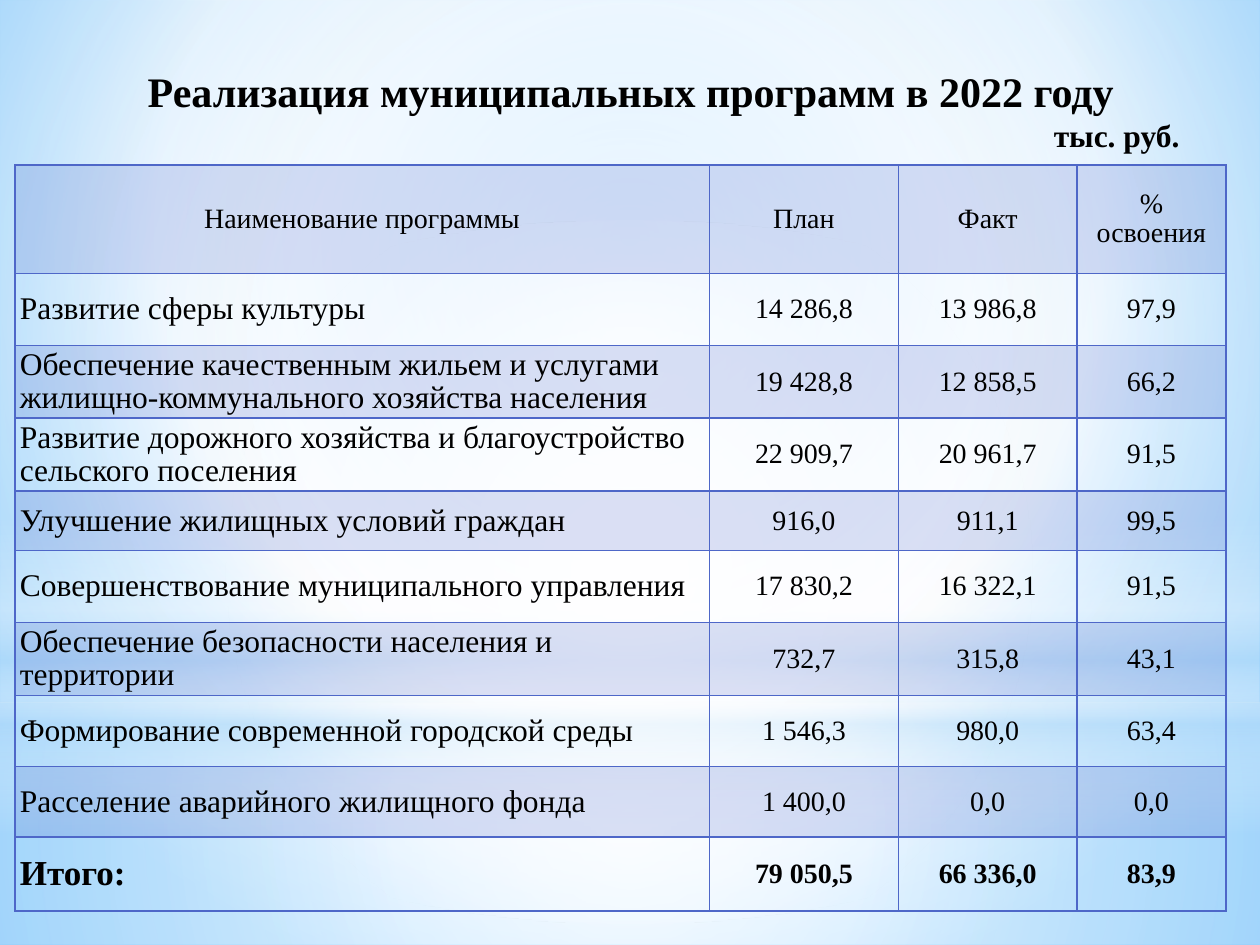
from lxml import etree
from pptx import Presentation
from pptx.dml.color import RGBColor
from pptx.enum.shapes import MSO_SHAPE
from pptx.enum.text import MSO_ANCHOR, PP_ALIGN
from pptx.oxml.ns import qn
from pptx.util import Cm, Pt

RECT, OVAL = MSO_SHAPE.RECTANGLE, MSO_SHAPE.OVAL
MIDDLE = MSO_ANCHOR.MIDDLE
LEFT, CENTER, RIGHT = PP_ALIGN.LEFT, PP_ALIGN.CENTER, PP_ALIGN.RIGHT

BLACK = RGBColor(0, 0, 0)
WHITE = RGBColor(0xFF, 0xFF, 0xFF)
INDIGO = RGBColor(0x4E, 0x67, 0xC8)
PALE_BLUE = RGBColor(0xB4, 0xDC, 0xFA)
LIGHT_SKY = RGBColor(0x9E, 0xD5, 0xFF)
SKY = RGBColor(0x5B, 0xB9, 0xFF)

HEADINGS = ["Наименование программы", "План", "Факт", "% освоения"]
PROGRAMS = [
    ["Развитие сферы культуры", "14 286,8", "13 986,8", "97,9"],
    ["Обеспечение качественным жильем и услугами жилищно-коммунального "
     "хозяйства населения", "19 428,8", "12 858,5", "66,2"],
    ["Развитие дорожного хозяйства и благоустройство сельского поселения",
     "22 909,7", "20 961,7", "91,5"],
    ["Улучшение жилищных условий граждан", "916,0", "911,1", "99,5"],
    ["Совершенствование муниципального управления", "17 830,2", "16 322,1", "91,5"],
    ["Обеспечение безопасности населения и территории", "732,7", "315,8", "43,1"],
    ["Формирование современной городской среды", "1 546,3", "980,0", "63,4"],
    ["Расселение аварийного жилищного фонда", "1 400,0", "0,0", "0,0"],
]
TOTAL = ["Итого:", "79 050,5", "66 336,0", "83,9"]
COLUMN_WIDTHS = [14, 3.81, 3.6, 3]
ROW_HEIGHTS = [2.18, 1.45, 1.45, 1.45, 1.2, 1.45, 1.45, 1.43, 1.43, 1.49]


def add_color(parent, color, opacity=100):
    clr = etree.SubElement(parent, qn("a:srgbClr"), val=str(color))
    if opacity < 100:
        etree.SubElement(clr, qn("a:alpha"), val=str(opacity * 1000))


def set_gradient(owner, stops, center=None):
    """Turn the solid fill in owner into a radial gradient, or a vertical one without center."""
    solid = owner.xpath(".//a:solidFill")[0]
    gradient = etree.Element(qn("a:gradFill"), rotWithShape="1")
    stop_list = etree.SubElement(gradient, qn("a:gsLst"))
    for position, color, opacity in stops:
        stop = etree.SubElement(stop_list, qn("a:gs"), pos=str(position * 1000))
        add_color(stop, color, opacity)
    if center:
        circle = etree.SubElement(gradient, qn("a:path"), {"path": "circle"})
        edges = {side: str(share * 1000) for side, share in zip("ltrb", center)}
        etree.SubElement(circle, qn("a:fillToRect"), edges)
    else:
        etree.SubElement(gradient, qn("a:lin"), ang="5400000", scaled="0")
    solid.getparent().replace(solid, gradient)


class SlideBuilder:
    font = "Times New Roman"
    line_spacing = 0.95

    def __init__(self, slide):
        self.slide = slide

    def background(self, stops, center):
        self.slide.background.fill.solid()
        set_gradient(self.slide.element, stops, center)

    def glow(self, kind, top, height, stops, center=None):
        """Add a full-width translucent gradient shape."""
        shape = self.slide.shapes.add_shape(kind, 0, Cm(top), Cm(25.4), Cm(height))
        shape.shadow.inherit = False
        shape.line.fill.background()
        shape.fill.solid()
        set_gradient(shape.element.spPr, stops, center)

    def add_text(self, paragraph, text, size, align, bold=False):
        paragraph.alignment = align
        run = paragraph.add_run()
        run.text = text
        run.font.name = self.font
        run.font.size = Pt(size)
        run.font.bold = bold
        run.font.color.rgb = BLACK

    def title(self, heading, unit):
        box = self.slide.shapes.add_textbox(Cm(1.4), Cm(1.2), Cm(22.63), Cm(1.2))
        frame = box.text_frame
        frame.word_wrap = True
        self.add_text(frame.paragraphs[0], heading, 24, CENTER, True)
        self.add_text(frame.add_paragraph(), unit, 18, RIGHT, True)

    def cell(self, cell, text, size, align, margins, bold, shaded):
        cell.vertical_anchor = MIDDLE
        cell.margin_left, cell.margin_top, cell.margin_right, cell.margin_bottom = map(Cm, margins)
        paragraph = cell.text_frame.paragraphs[0]
        paragraph.line_spacing = self.line_spacing
        self.add_text(paragraph, text, size, align, bold)
        properties = cell._tc.get_or_add_tcPr()
        for side in "LRTB":
            border = etree.SubElement(properties, qn(f"a:ln{side}"), w=str(Pt(1)))
            add_color(etree.SubElement(border, qn("a:solidFill")), INDIGO)
        if shaded:
            add_color(etree.SubElement(properties, qn("a:solidFill")), INDIGO, 20)
        else:
            cell.fill.background()

    def table(self, left, top, rows, widths, heights):
        frame = self.slide.shapes.add_table(
            len(rows), len(widths), Cm(left), Cm(top), Cm(sum(widths)), Cm(sum(heights)))
        table = frame.table
        table.first_row = table.horz_banding = False
        for column, width in zip(table.columns, widths):
            column.width = Cm(width)
        for r, (values, height) in enumerate(zip(rows, heights)):
            table.rows[r].height = Cm(height)
            is_header, is_total = r == 0, r == len(rows) - 1
            for c, value in enumerate(values):
                is_name = c == 0 and not is_header
                size = (20 if is_total else 18) if is_name else 16
                margins = (0.25, 0.13, 0.25, 0.13) if is_header else (
                    0.1 if is_name else 0.02, 0.02, 0.02, 0)
                self.cell(table.cell(r, c), value, size, LEFT if is_name else CENTER,
                          margins, is_total, shaded=r % 2 == 0)


def main():
    presentation = Presentation()
    presentation.slide_width, presentation.slide_height = Cm(25.4), Cm(19.05)
    builder = SlideBuilder(presentation.slides.add_slide(presentation.slide_layouts[6]))
    middle = (50, 50, 50, 50)

    builder.background([(0, LIGHT_SKY, 100), (60, WHITE, 100), (100, SKY, 100)],
                       (20, 10, 20, 60))
    builder.glow(RECT, 14.17, 4.88,
                 [(0, WHITE, 91), (37, WHITE, 76), (100, PALE_BLUE, 79)], middle)
    builder.glow(RECT, 0, 14.17,
                 [(0, WHITE, 89), (48, WHITE, 62), (100, PALE_BLUE, 79)], middle)
    builder.glow(RECT, 10.46, 6.35,
                 [(0, WHITE, 0), (29, WHITE, 30), (45, PALE_BLUE, 40),
                  (55, WHITE, 26), (65, PALE_BLUE, 60), (100, WHITE, 0)])
    builder.glow(OVAL, 4.45, 14.17, [(0, WHITE, 100), (56, WHITE, 0)], middle)

    builder.title("Реализация муниципальных программ в 2022 году", "тыс. руб.")
    builder.table(0.3, 3.33, [HEADINGS, *PROGRAMS, TOTAL], COLUMN_WIDTHS, ROW_HEIGHTS)
    presentation.save("out.pptx")


if __name__ == "__main__":
    main()
